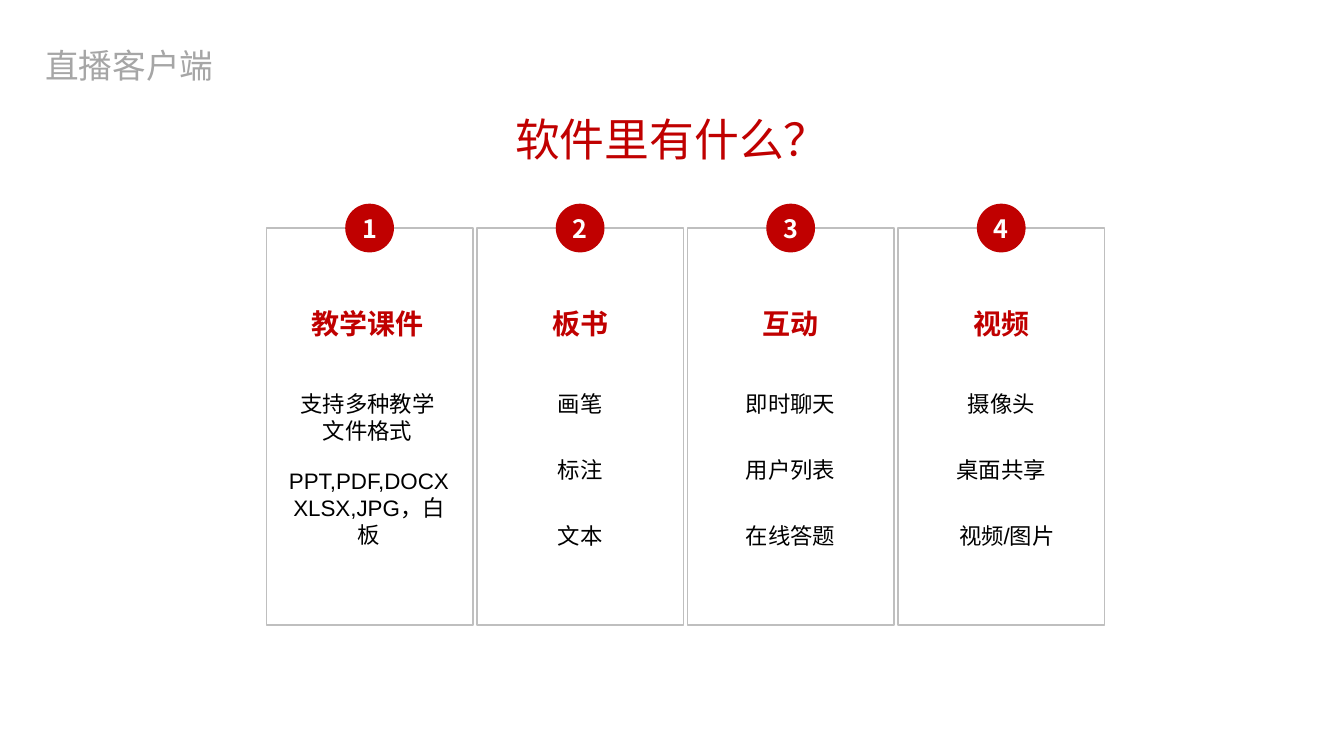
from pptx import Presentation
from pptx.dml.color import RGBColor
from pptx.enum.shapes import MSO_SHAPE as Shape
from pptx.enum.text import MSO_ANCHOR as Anchor, MSO_AUTO_SIZE as AutoSize, PP_ALIGN as Align
from pptx.util import Pt


def color(value):
    return RGBColor.from_string(value)


def write(shape, text, font_color, alignment=Align.CENTER, spacing=None, **font_format):
    frame = shape.text_frame
    frame.text = text
    for paragraph in frame.paragraphs:
        paragraph.alignment = alignment
        paragraph.line_spacing = spacing
        for run in paragraph.runs:
            for name, value in font_format.items():
                setattr(run.font, name, value)
            run.font.color.rgb = color(font_color)
    return frame


RED, GREY, BLACK, BORDER = "C00000", "A6A6A6", "000000", "BFBFBF"
HEADING = {"name": "Arial", "size": Pt(20), "bold": True}
BODY = {"name": "Arial", "size": Pt(16)}
NUMBER = {"name": "Noto Sans CJK SC", "size": Pt(18), "bold": True}

presentation = Presentation()
presentation.slide_width = Pt(960)
presentation.slide_height = Pt(540)
slide = presentation.slides.add_slide(presentation.slide_layouts[6])

titles = [
    ("软件里有什么？", 0, 56.9, 960, 32, RED, Align.CENTER, 1.5),
    ("直播客户端", 25.2, 0, 910, 24, GREY, Align.LEFT, 2.0),
]
for text, left, top, width, size, font_color, alignment, spacing in titles:
    box = slide.shapes.add_textbox(Pt(left), Pt(top), Pt(width), Pt(65.5))
    frame = write(box, text, font_color, alignment, spacing, name="Arial", size=Pt(size))
    frame.word_wrap = True
    frame.auto_size = AutoSize.SHAPE_TO_FIT_TEXT

ROWS = [275.2, 322.6, 369.4]
columns = [
    ("教学课件", -1.4, [
        ("支持多种教学\n文件格式", ROWS[0], 110.4, -1.4, False),
        ("PPT,PDF,DOCX\nXLSX,JPG，白板", 330.3, 134.6, -0.4, True),
    ]),
    ("板书", 0.4, [(text, top, 46.4, 0, False) for text, top in zip(["画笔", "标注", "文本"], ROWS)]),
    ("互动", 0, [(text, top, 78.4, 0, False) for text, top in zip(["即时聊天", "用户列表", "在线答题"], ROWS)]),
    ("视频", 0, [
        ("摄像头", ROWS[0], 62.4, 0, False),
        ("桌面共享", ROWS[1], 78.4, 0, False),
        ("视频/图片", ROWS[2], 86.4, 4, True),
    ]),
]

CARD_LEFT, CARD_TOP, CARD_WIDTH, CARD_HEIGHT, CARD_STEP = 190.2, 162.9, 147.6, 283.7, 150.4
BADGE = 34.8

for index, (heading, heading_shift, items) in enumerate(columns):
    left = CARD_LEFT + index * CARD_STEP
    center = left + CARD_WIDTH / 2
    group = slide.shapes.add_group_shape()

    card = group.shapes.add_shape(Shape.RECTANGLE, Pt(left), Pt(CARD_TOP), Pt(CARD_WIDTH), Pt(CARD_HEIGHT))
    card.shadow.inherit = False
    card.fill.background()
    card.line.color.rgb = color(BORDER)
    card.line.width = Pt(1)

    heading_width = len(heading) * 20 + 14.4
    texts = [(heading, 215.3, heading_width, heading_shift, False, RED, HEADING)]
    texts += [(*item, BLACK, BODY) for item in items]
    for text, top, width, shift, wraps, font_color, font_format in texts:
        height = 31.5 if font_format is HEADING else 26.6 + 19.4 * text.count("\n")
        box = group.shapes.add_textbox(Pt(center + shift - width / 2), Pt(top), Pt(width), Pt(height))
        frame = write(box, text, font_color, **font_format)
        frame.word_wrap = wraps
        frame.auto_size = AutoSize.SHAPE_TO_FIT_TEXT

    badge = slide.shapes.add_shape(
        Shape.OVAL, Pt(center - BADGE / 2), Pt(CARD_TOP - BADGE / 2), Pt(BADGE), Pt(BADGE))
    badge.shadow.inherit = False
    badge.fill.solid()
    badge.fill.fore_color.rgb = color(RED)
    badge.line.fill.background()
    frame = write(badge, str(index + 1), "FFFFFF", **NUMBER)
    frame.vertical_anchor = Anchor.MIDDLE

presentation.save("out.pptx")
